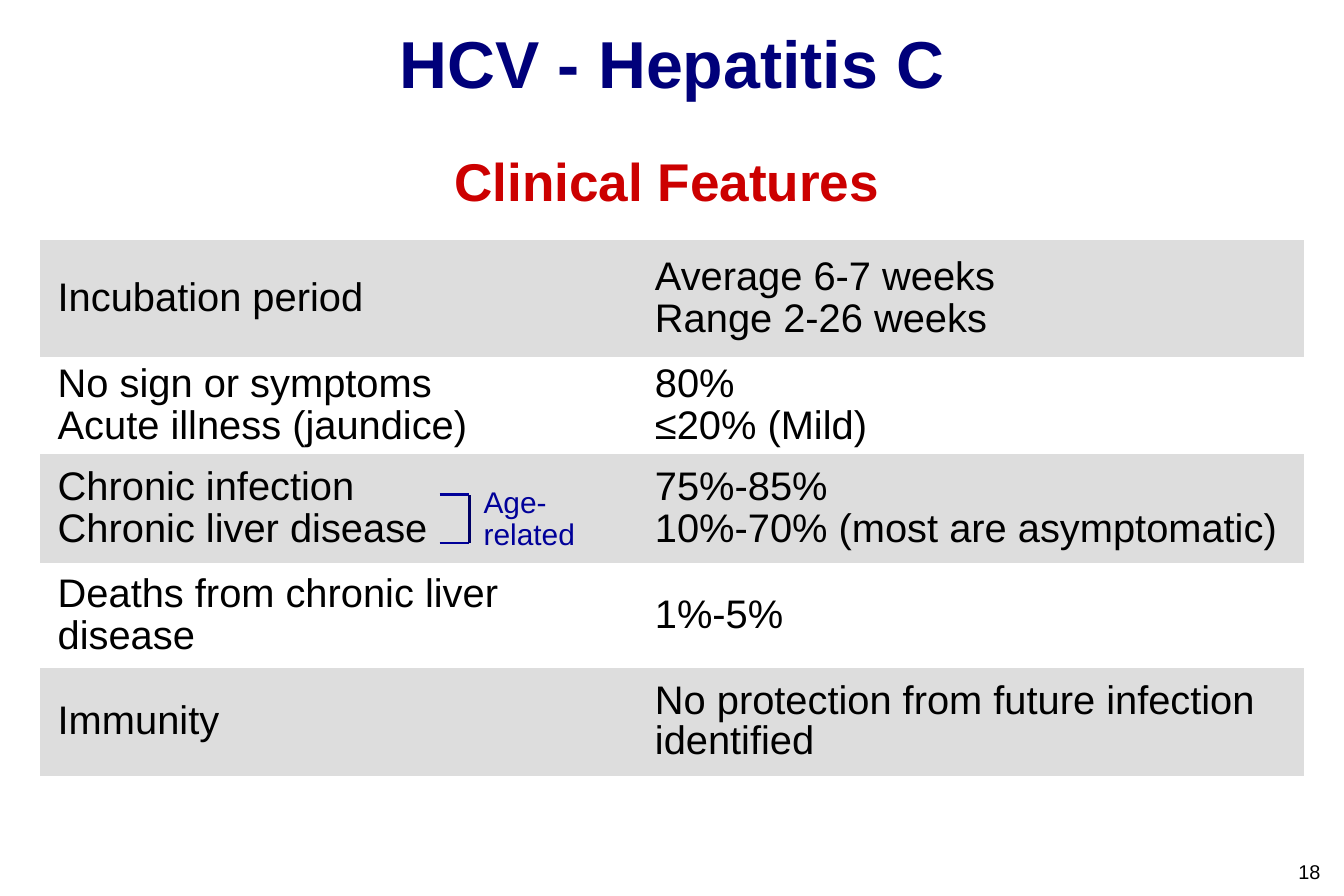
"""Build the slide on the clinical features of hepatitis C."""
from pptx import Presentation
from pptx.dml.color import RGBColor
from pptx.enum.shapes import MSO_CONNECTOR
from pptx.enum.text import MSO_ANCHOR, PP_ALIGN
from pptx.oxml.ns import qn
from pptx.util import Inches, Pt
from lxml import etree

STRAIGHT = MSO_CONNECTOR.STRAIGHT
TOP, MIDDLE = MSO_ANCHOR.TOP, MSO_ANCHOR.MIDDLE
LEFT, CENTER = PP_ALIGN.LEFT, PP_ALIGN.CENTER
BLACK = RGBColor(0x00, 0x00, 0x00)
GREY = RGBColor(0xDD, 0xDD, 0xDD)
NAVY = RGBColor(0x00, 0x00, 0x7A)
RED = RGBColor(0xCC, 0x00, 0x00)
BLUE = RGBColor(0x00, 0x00, 0x99)
DARK_BLUE = RGBColor(0x00, 0x00, 0x66)
FONT = "Arial"
NO_STYLE = "{2D5ABB26-0587-4C30-8999-92F81FD0307C}"

deck = Presentation()
deck.slide_width, deck.slide_height = Inches(11.25), Inches(7.5)
COLUMN, ROW = deck.slide_width / 100, deck.slide_height / 100
page = deck.slides.add_slide(deck.slide_layouts[6])


def place(left, top, width, height):
    """Turn grid columns and rows into slide lengths."""
    return (int(left * COLUMN), int(top * ROW),
            int(width * COLUMN), int(height * ROW))


def write(frame, text, size, color, bold=False, align=LEFT, spacing=1.0):
    """Fill a text frame and format its runs."""
    frame.word_wrap = True
    frame.text = text
    for para in frame.paragraphs:
        para.alignment, para.line_spacing = align, spacing
        for span in para.runs:
            span.font.name, span.font.size = FONT, Pt(size)
            span.font.bold, span.font.color.rgb = bold, color


features = [
    (13.07, "Incubation period", "Average 6-7 weeks\vRange 2-26 weeks"),
    (10.8, "No sign or symptoms\nAcute illness (jaundice)", "80%\n≤20% (Mild)"),
    (12.2, "Chronic infection\vChronic liver disease",
     "75%-85%\v10%-70% (most are asymptomatic)"),
    (11.73, "Deaths from chronic liver disease", "1%-5%"),
    (12, "Immunity", "No protection from future infection identified"),
]
widths = [44.44, 49.6]
table = page.shapes.add_table(
    len(features), len(widths),
    *place(2.96, 26.8, sum(widths), sum(row[0] for row in features))).table
table.first_row = table.horz_banding = False
table._tbl.tblPr.find(qn("a:tableStyleId")).text = NO_STYLE
for column, width in zip(table.columns, widths):
    column.width = int(width * COLUMN)
for index, (height, *texts) in enumerate(features):
    table.rows[index].height = int(height * ROW)
    for cell, text in zip(table.rows[index].cells, texts):
        cell.margin_left = cell.margin_right = Inches(0.15)
        cell.margin_top = cell.margin_bottom = Inches(0.05)
        cell.vertical_anchor = MIDDLE
        write(cell.text_frame, text, 24, BLACK, spacing=0.95)
        if index % 2:
            cell.fill.background()
        else:
            cell.fill.solid()
            cell.fill.fore_color.rgb = GREY
table.cell(4, 1).text_frame.paragraphs[0].line_spacing = 0.9

labels = [
    ("18", (95.56, 95.6, 3.73, 3.73), 12, BLACK, False, CENTER, 0.9, TOP, 0.05, 0.05),
    ("HCV - Hepatitis C", (0, 0, 100, 13.87), 40, NAVY, True, CENTER, 1.0, MIDDLE, 0, 0),
    ("Clinical Features", (28.89, 16.67, 41.51, 7.73), 32, RED, True, CENTER, 0.9,
     TOP, 0.05, 0.05),
    ("Age-related", (35.11, 53.73, 10.4, 8.53), 18, BLUE, False, LEFT, 0.9, TOP, 0.1, 0.05),
]
for text, area, size, color, bold, align, spacing, anchor, side, edge in labels:
    frame = page.shapes.add_textbox(*place(*area)).text_frame
    frame.margin_left = frame.margin_right = Inches(side)
    frame.margin_top = frame.margin_bottom = Inches(edge)
    frame.vertical_anchor = anchor
    write(frame, text, size, color, bold, align, spacing)

start, end, upper, lower = 32.71, 34.93, 55.2, 60.6
bracket = [
    (start, upper, end, upper, BLUE),
    (start, lower, end, lower, BLUE),
    (end, lower, end, upper, DARK_BLUE),
]
for *ends, color in bracket:
    line = page.shapes.add_connector(STRAIGHT, *place(*ends))
    line.line.color.rgb, line.line.width = color, Pt(1.5)
    etree.SubElement(line._element.spPr, qn("a:effectLst"))

deck.save("out.pptx")
